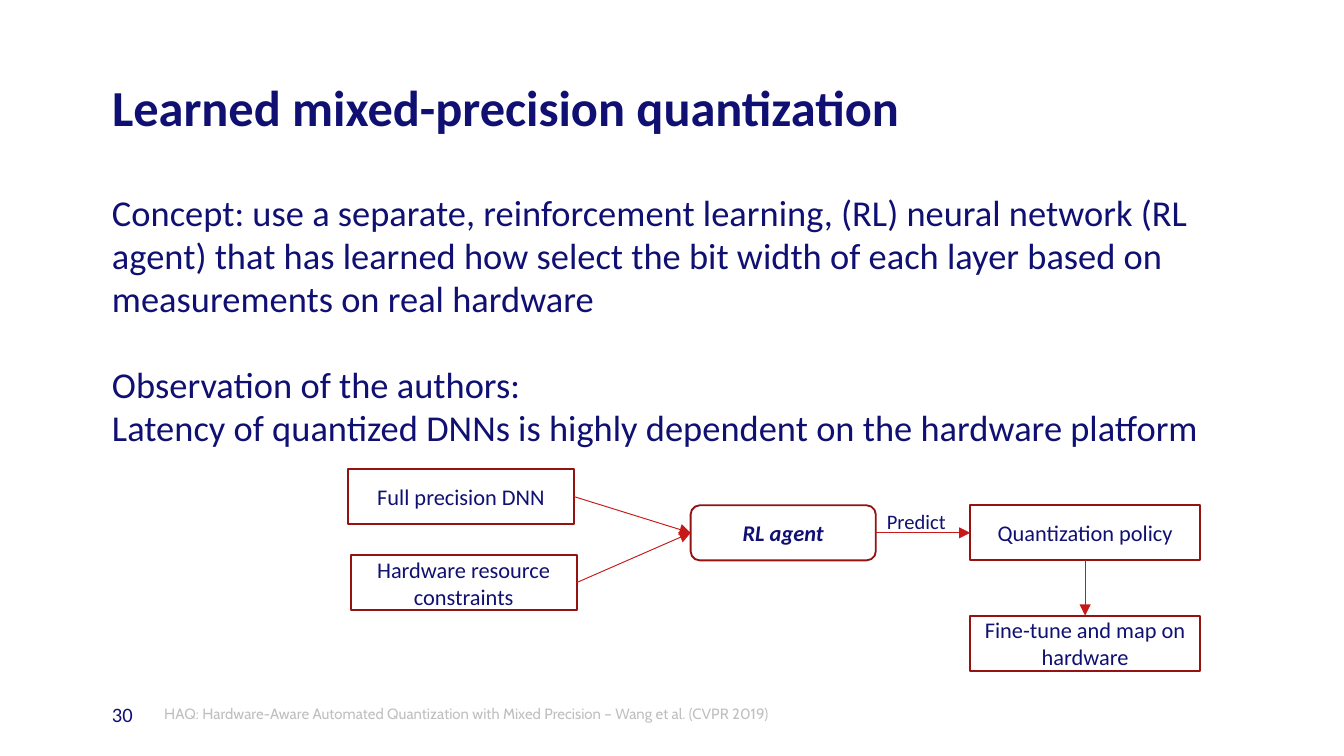
"""Build the slide on learned mixed-precision quantization."""
from dataclasses import dataclass

from lxml.etree import SubElement
from pptx import Presentation
from pptx.dml.color import RGBColor
from pptx.enum.shapes import MSO_CONNECTOR, MSO_SHAPE as Preset
from pptx.enum.text import MSO_ANCHOR as Anchor, MSO_AUTO_SIZE as AutoSize, PP_ALIGN as Align
from pptx.oxml.ns import qn
from pptx.util import Pt

COLORS = {"navy": "101073", "gray": "BFBFBF", "white": "FFFFFF", "border": "941212", "arrow": "C81919"}
ROW_HEIGHT = 29.5
TOP, LEFT, BOTTOM, RIGHT = range(4)


@dataclass(frozen=True)
class Box:
    left: float
    top: float
    width: float
    height: float = ROW_HEIGHT

    @property
    def lengths(self) -> tuple:
        return tuple(Pt(value) for value in (self.left, self.top, self.width, self.height))


@dataclass(frozen=True)
class Style:
    size: float
    color: str = "navy"
    name: str = "Calibri"
    bold: bool = False
    italic: bool = False


@dataclass(frozen=True)
class Node:
    text: str
    box: Box
    preset: Preset = Preset.FLOWCHART_PROCESS
    emphasis: bool = False


@dataclass(frozen=True)
class Arrow:
    source: str
    source_side: int
    target: str
    target_side: int


NODES = {
    "network": Node("Full precision DNN", Box(186.5, 251.3, 121)),
    "constraints": Node("Hardware resource constraints", Box(187.9, 297.4, 121)),
    "agent": Node("RL agent", Box(370, 270.7, 99.2), Preset.FLOWCHART_ALTERNATE_PROCESS, True),
    "policy": Node("Quantization policy", Box(519.8, 270.7, 123.1)),
    "mapping": Node("Fine-tune and map on hardware", Box(519.8, 329.8, 123.1)),
}
ARROWS = [
    Arrow("network", RIGHT, "agent", LEFT),
    Arrow("constraints", RIGHT, "agent", LEFT),
    Arrow("agent", RIGHT, "policy", LEFT),
    Arrow("policy", BOTTOM, "mapping", TOP),
]
BODY = [
    "Concept: use a separate, reinforcement learning, (RL) neural network (RL agent) that has "
    "learned how select the bit width of each layer based on measurements on real hardware",
    "Observation of the authors:\vLatency of quantized DNNs is highly dependent on the hardware platform",
]
CITATION = "HAQ: Hardware-Aware Automated Quantization with Mixed Precision – Wang et al. (CVPR 2019)"


def color_of(key: str) -> RGBColor:
    return RGBColor.from_string(COLORS[key])


def write_text(shape, paragraphs: list, style: Style, align=Align.LEFT, gap: float = 0,
               spacing: float = 1, **frame_format) -> None:
    frame = shape.text_frame
    frame_format = {"word_wrap": True, "auto_size": AutoSize.NONE, "vertical_anchor": Anchor.TOP} | frame_format
    for attribute, value in frame_format.items():
        setattr(frame, attribute, value)
    for index, text in enumerate(paragraphs):
        paragraph = frame.add_paragraph() if index else frame.paragraphs[0]
        paragraph.text = text
        paragraph.alignment = align
        paragraph.line_spacing = spacing
        paragraph.space_before = Pt(gap if index else 0)
        for run in paragraph.runs:
            font_format = {"name": style.name, "size": Pt(style.size), "bold": style.bold, "italic": style.italic}
            for attribute, value in font_format.items():
                setattr(run.font, attribute, value)
            run.font.color.rgb = color_of(style.color)


def insets(left: float = 0) -> dict:
    return {"margin_left": Pt(left), "margin_top": 0, "margin_right": 0, "margin_bottom": 0}


def add_panel(slide, preset: Preset, box: Box, border: str = ""):
    shape = slide.shapes.add_shape(preset, *box.lengths)
    shape.shadow.inherit = False
    shape.fill.solid()
    shape.fill.fore_color.rgb = color_of("white")
    if border:
        shape.line.color.rgb = color_of(border)
        shape.line.width = Pt(1)
    else:
        shape.line.fill.background()
    return shape


def add_node(slide, node: Node):
    shape = add_panel(slide, node.preset, node.box, "border")
    style = Style(12, bold=node.emphasis, italic=node.emphasis)
    write_text(shape, [node.text], style, Align.CENTER, vertical_anchor=Anchor.MIDDLE)
    return shape


def add_arrow(slide, arrow: Arrow, shapes: dict) -> None:
    connector = slide.shapes.add_connector(MSO_CONNECTOR.STRAIGHT, 0, 0, 0, 0)
    connector.begin_connect(shapes[arrow.source], arrow.source_side)
    connector.end_connect(shapes[arrow.target], arrow.target_side)
    connector.line.color.rgb = color_of("arrow")
    connector.line.width = Pt(0.5)
    SubElement(connector.line._get_or_add_ln(), qn("a:tailEnd"), type="triangle")
    SubElement(connector._element.spPr, qn("a:effectLst"))


def main() -> None:
    presentation = Presentation()
    presentation.slide_width, presentation.slide_height = Pt(720), Pt(405)
    slide = presentation.slides.add_slide(presentation.slide_layouts[5])

    title = slide.shapes.title
    title.left, title.top, title.width, title.height = Box(60, 41, 595, 42.5).lengths
    write_text(title, ["Learned mixed-precision quantization"], Style(27, bold=True), **insets())

    body = slide.shapes.add_textbox(*Box(60, 103, 595, 230).lengths)
    write_text(body, BODY, Style(19.5), gap=23.4, spacing=0.98, **insets())

    citation = add_panel(slide, Preset.RECTANGLE, Box(88, 360, 554, 45))
    write_text(citation, [CITATION], Style(8, "gray", "Cabin"), vertical_anchor=Anchor.MIDDLE, **insets())
    number = add_panel(slide, Preset.RECTANGLE, Box(0, 360, 88, 45))
    write_text(number, ["30"], Style(11), vertical_anchor=Anchor.MIDDLE, **insets(60))

    shapes = {key: add_node(slide, node) for key, node in NODES.items()}
    for arrow in ARROWS:
        add_arrow(slide, arrow, shapes)
    label = slide.shapes.add_textbox(*Box(468, 269.3, 51.8, 20.9).lengths)
    write_text(label, ["Predict"], Style(11))

    presentation.save("out.pptx")


if __name__ == "__main__":
    main()
